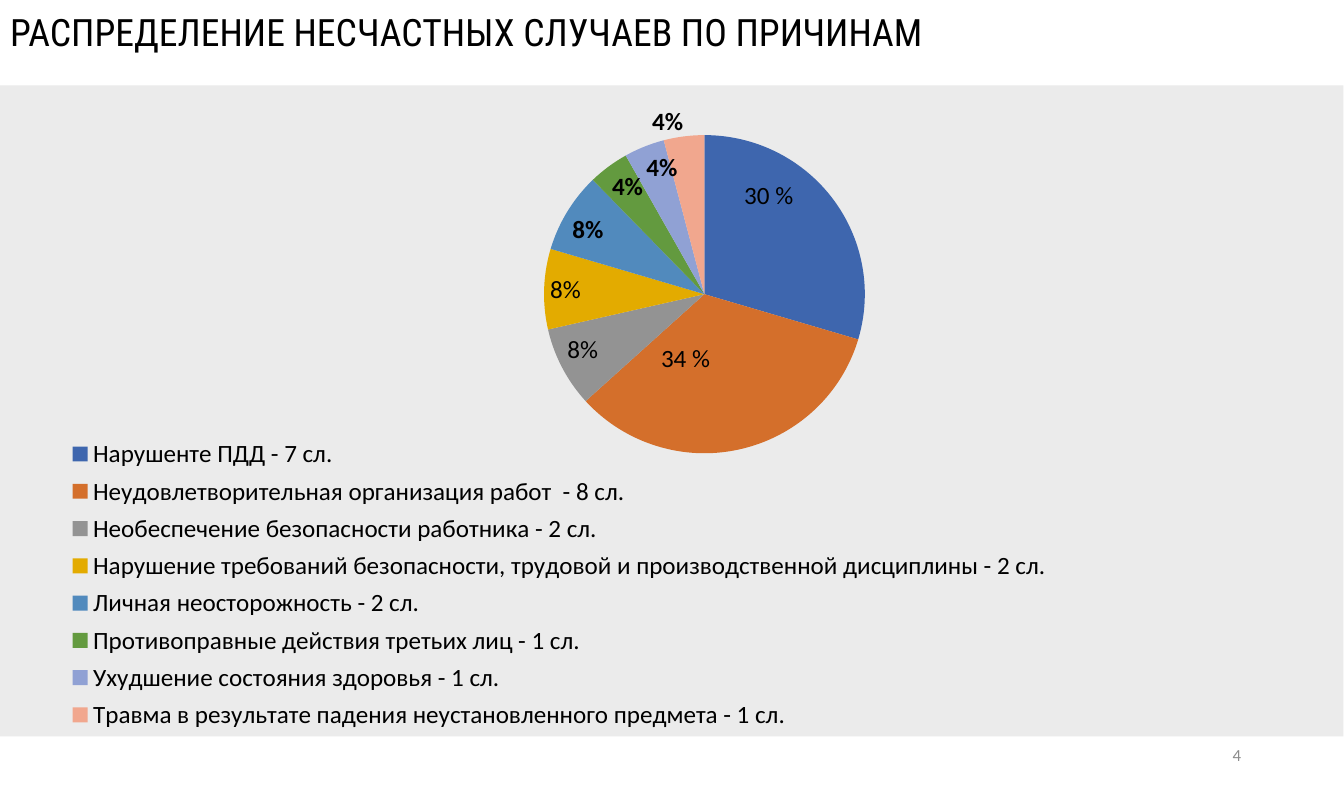
from lxml import etree
from pptx import Presentation
from pptx.chart.data import CategoryChartData
from pptx.dml.color import RGBColor
from pptx.enum.chart import XL_CHART_TYPE, XL_LABEL_POSITION, XL_LEGEND_POSITION
from pptx.enum.shapes import MSO_SHAPE
from pptx.enum.text import MSO_ANCHOR, MSO_AUTO_SIZE, PP_ALIGN
from pptx.oxml.ns import qn
from pptx.util import Inches, Pt

PIE = XL_CHART_TYPE.PIE
CENTER = XL_LABEL_POSITION.CENTER
INSIDE_END = XL_LABEL_POSITION.INSIDE_END
OUTSIDE_END = XL_LABEL_POSITION.OUTSIDE_END

# The slide measures 34 by 20 centimetres
CM_PER_INCH = 2.54
SLIDE_WIDTH = Inches(34 / CM_PER_INCH)
SLIDE_HEIGHT = Inches(20 / CM_PER_INCH)

TITLE = "РАСПРЕДЕЛЕНИЕ НЕСЧАСТНЫХ СЛУЧАЕВ ПО ПРИЧИНАМ"
SLIDE_NUMBER = "4"
BLACK = "000000"

# Cause, percent, slice colour
CAUSES = [
    ("Нарушенте ПДД - 7 сл.", 29, "3E66AE"),
    ("Неудовлетворительная организация работ  - 8 сл.", 33, "D46F2B"),
    ("Необеспечение безопасности работника - 2 сл.", 8, "939393"),
    ("Нарушение требований безопасности, трудовой и производственной дисциплины - 2 сл.", 8, "E3AB00"),
    ("Личная неосторожность - 2 сл.", 8, "518ABD"),
    ("Противоправные действия третьих лиц - 1 сл.", 4, "639A3F"),
    ("Ухудшение состояния здоровья - 1 сл.", 4, "90A1D4"),
    ("Травма в результате падения неустановленного предмета - 1 сл.", 4, "F1A78E"),
]
# Slice index, text, bold, position, offset as a share of the chart
SPECIAL_LABELS = [
    (0, "30 %", False, CENTER, (0, -0.08)),
    (1, "34 %", False, CENTER, (-0.03, -0.02)),
    (2, "8%", False, INSIDE_END, None),
    (3, "8%", False, INSIDE_END, None),
    (7, "4%", True, OUTSIDE_END, None),
]
PLOT_LAYOUT = {"layoutTarget": "inner", "xMode": "edge", "yMode": "edge",
               "x": 0.065, "y": 0.046, "w": 0.935, "h": 0.504}
LEGEND_LAYOUT = {"xMode": "edge", "yMode": "edge",
                 "x": 0.004, "y": 0.516, "w": 0.82, "h": 0.484}


def color(value):
    return RGBColor.from_string(value)


def style_font(font, name, size, value, bold=False):
    font.name = name
    font.size = Pt(size)
    font.color.rgb = color(value)
    font.bold = bold


def set_layout(element, settings, previous):
    """Place a chart part by hand, its layout following the child named previous."""
    for old_layout in element.findall(qn("c:layout")):
        element.remove(old_layout)
    layout = etree.Element(qn("c:layout"))
    manual = etree.SubElement(layout, qn("c:manualLayout"))
    for name, value in settings.items():
        etree.SubElement(manual, qn("c:" + name)).set("val", str(value))
    if previous is None:
        element.insert(0, layout)
    else:
        element.find(qn(previous)).addnext(layout)


def place(shape, left, top, width, height):
    shape.left, shape.top = Inches(left), Inches(top)
    shape.width, shape.height = Inches(width), Inches(height)


def add_background(slide):
    panel = slide.shapes.add_shape(
        MSO_SHAPE.RECTANGLE, Inches(0), Inches(0.85), Inches(13.38), Inches(6.48))
    panel.shadow.inherit = False
    panel.fill.solid()
    panel.fill.fore_color.rgb = color("EBEBEB")
    panel.line.fill.background()


def add_title(slide):
    title = slide.shapes.title
    place(title, 0, 0.04, 13.72, 0.56)
    frame = title.text_frame
    frame.text = TITLE
    frame.auto_size = MSO_AUTO_SIZE.NONE
    frame.vertical_anchor = MSO_ANCHOR.TOP
    paragraph = frame.paragraphs[0]
    paragraph.alignment = PP_ALIGN.LEFT
    style_font(paragraph.runs[0].font, "Roboto Condensed", 27, BLACK)


def add_slide_number(slide):
    box = slide.shapes.add_textbox(
        Inches(9.45), Inches(7.3), Inches(3.01), Inches(0.42))
    frame = box.text_frame
    frame.word_wrap = True
    frame.vertical_anchor = MSO_ANCHOR.MIDDLE
    frame.text = SLIDE_NUMBER
    paragraph = frame.paragraphs[0]
    paragraph.alignment = PP_ALIGN.RIGHT
    style_font(paragraph.runs[0].font, "Calibri", 12.1, "8C8C8C")


def add_labels(series):
    labels = series.data_labels
    labels.show_value = False
    labels.show_percentage = True
    labels.number_format = "0%"
    labels.number_format_is_linked = False
    labels.position = INSIDE_END
    style_font(labels.font, "Calibri", 18, BLACK, bold=True)
    for index, text, bold, position, offset in SPECIAL_LABELS:
        label = series.points[index].data_label
        label.text_frame.text = text
        run = label.text_frame.paragraphs[0].runs[0]
        style_font(run.font, "Calibri", 18, BLACK, bold)
        label.position = position
        if offset:
            element = labels._element.find(f"{qn('c:dLbl')}[{index + 1}]")
            set_layout(element, dict(zip("xy", offset)), "c:idx")


def add_causes_chart(slide):
    data = CategoryChartData(number_format="General")
    data.categories = [cause for cause, _, _ in CAUSES]
    data.add_series("Series 1", [percent for _, percent, _ in CAUSES])
    chart = slide.shapes.add_chart(
        PIE, Inches(0.52), Inches(1), Inches(12.2), Inches(6.34), data).chart
    chart.has_title = False
    style_font(chart.font, "Calibri", 18, BLACK)

    plot = chart.plots[0]
    plot.vary_by_categories = True
    series = plot.series[0]
    for index, (_, _, slice_color) in enumerate(CAUSES):
        fill = series.points[index].format.fill
        fill.solid()
        fill.fore_color.rgb = color(slice_color)
    add_labels(series)

    chart.has_legend = True
    legend = chart.legend
    legend.position = XL_LEGEND_POSITION.TOP
    legend.include_in_layout = False
    style_font(legend.font, "Calibri", 18, BLACK)
    set_layout(legend._element, LEGEND_LAYOUT, "c:legendPos")
    plot_area = chart._chartSpace.find(f"{qn('c:chart')}/{qn('c:plotArea')}")
    set_layout(plot_area, PLOT_LAYOUT, None)


def main():
    presentation = Presentation()
    presentation.slide_width = SLIDE_WIDTH
    presentation.slide_height = SLIDE_HEIGHT
    slide = presentation.slides.add_slide(presentation.slide_layouts[5])
    add_background(slide)
    add_title(slide)
    add_slide_number(slide)
    add_causes_chart(slide)
    presentation.save("out.pptx")


if __name__ == "__main__":
    main()
